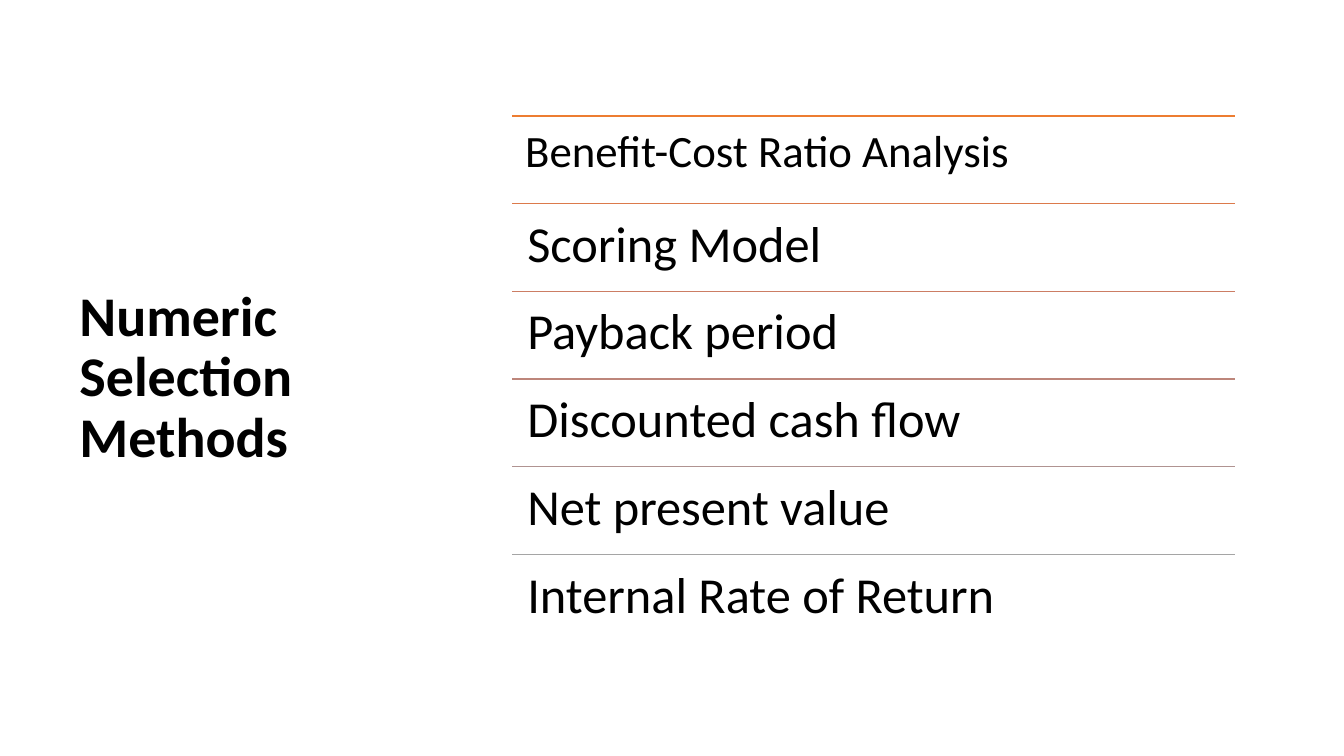
from pptx import Presentation
from pptx.dml.color import RGBColor
from pptx.enum.shapes import MSO_CONNECTOR
from pptx.enum.text import MSO_ANCHOR
from pptx.oxml.ns import qn
from pptx.util import Pt
from lxml.etree import SubElement

TITLE = "Numeric Selection Methods"
METHODS = [
    ("Benefit-Cost Ratio Analysis", 32, 13, "ED7D31"),
    ("Scoring Model", 36, 15, "DC7A4B"),
    ("Payback period", 36, 15, "CC7D64"),
    ("Discounted cash flow", 36, 15, "BD867B"),
    ("Net present value", 36, 15, "B09391"),
    ("Internal Rate of Return", 36, 15, "A5A5A5"),
]
PX = 9144
SLIDE_W, SLIDE_H = 1333, 750
TITLE_BOX = (69, 70, 393, 611)
LIST_X, LIST_Y, LIST_W, ROW_H = 508, 115, 717, 87


def rgb(color):
    """Return the colour for a hex string."""
    return RGBColor.from_string(color)


def add_text(s, box, text, size, insets, anchor, bold=False):
    """Add a wrapped one-paragraph text box."""
    tf = s.shapes.add_textbox(*(v * PX for v in box)).text_frame
    left, top, right, bottom = (v * PX for v in insets)
    frame = {"word_wrap": True, "vertical_anchor": anchor,
             "margin_left": left, "margin_top": top,
             "margin_right": right, "margin_bottom": bottom}
    for name, value in frame.items():
        setattr(tf, name, value)
    p = tf.paragraphs[0]
    p.line_spacing = 0.9
    r = p.add_run()
    r.text = text
    for name, value in {"name": "Calibri", "size": Pt(size), "bold": bold}.items():
        setattr(r.font, name, value)
    r.font.color.rgb = rgb("000000")


def add_rule(s, y, color):
    """Add a horizontal line above a list row."""
    sp = s.shapes.add_connector(MSO_CONNECTOR.STRAIGHT, LIST_X * PX, y * PX,
                                (LIST_X + LIST_W) * PX, y * PX)
    sp.line.color.rgb = rgb(color)
    sp.line.width = Pt(1)
    SubElement(sp._element.spPr, qn("a:effectLst"))


def main():
    """Build the slide and save it."""
    prs = Presentation()
    prs.slide_width, prs.slide_height = SLIDE_W * PX, SLIDE_H * PX
    s = prs.slides.add_slide(prs.slide_layouts[6])
    add_text(s, TITLE_BOX, TITLE, 40, (10, 5, 10, 5), MSO_ANCHOR.MIDDLE, True)
    for i, (text, size, inset, color) in enumerate(METHODS):
        y = LIST_Y + i * ROW_H
        add_rule(s, y, color)
        add_text(s, (LIST_X, y, LIST_W, ROW_H), text, size, (inset,) * 4,
                 MSO_ANCHOR.TOP)
    prs.save("out.pptx")


if __name__ == "__main__":
    main()
